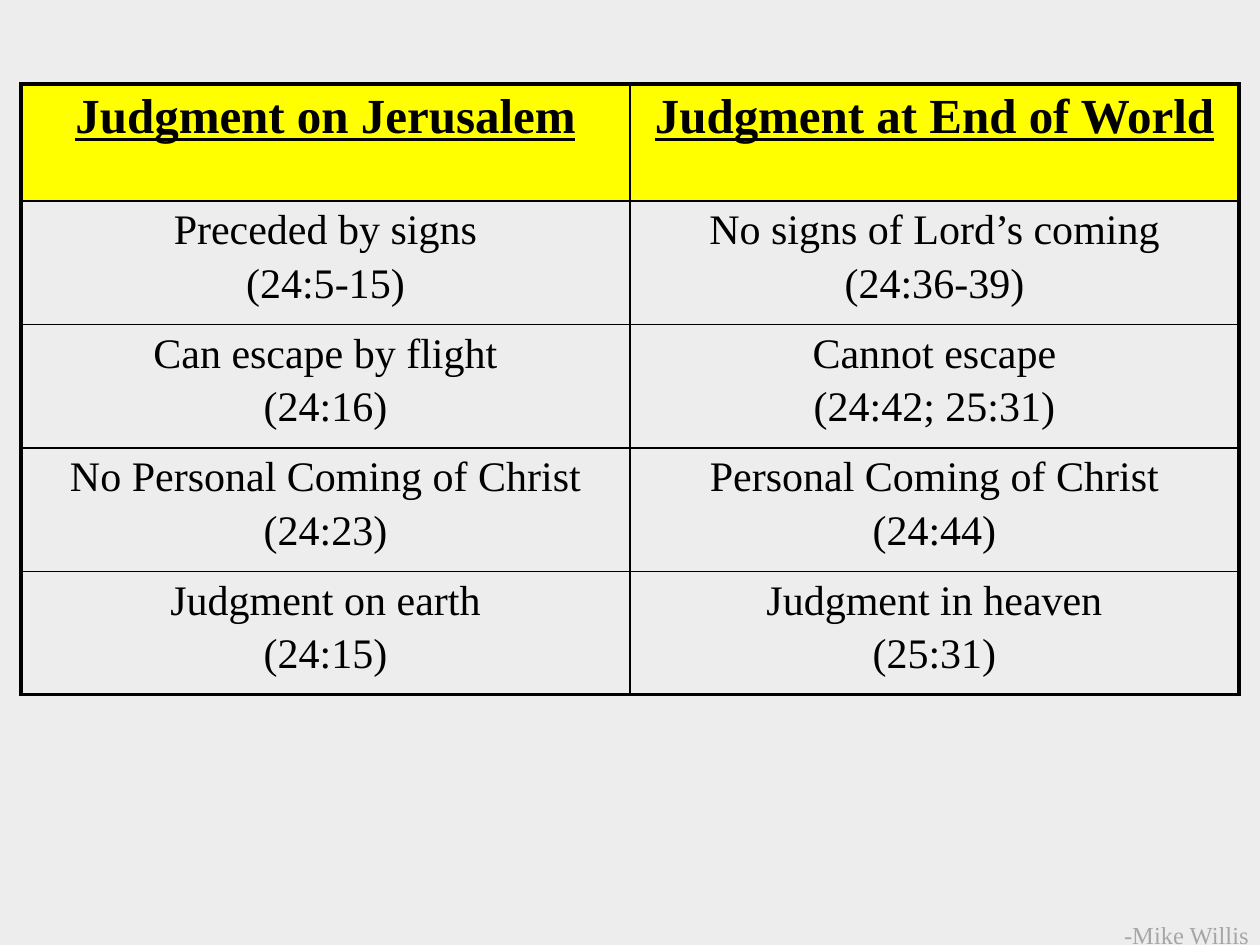
from dataclasses import dataclass

from lxml.etree import SubElement
from pptx import Presentation
from pptx.dml.color import RGBColor
from pptx.enum.text import PP_ALIGN
from pptx.oxml.ns import qn
from pptx.util import Pt


@dataclass(frozen=True)
class Theme:
    font: str = "Times New Roman"
    background: str = "EDEDED"
    ink: str = "000000"
    header_fill: str = "FFFF00"
    credit_ink: str = "A6A6A6"
    header_size: float = 28
    body_size: float = 24
    credit_size: float = 14
    frame_width: float = 2.25
    grid_width: float = 1


@dataclass(frozen=True)
class Box:
    left: float
    top: float
    width: float
    height: float

    def lengths(self):
        return [Pt(value) for value in (self.left, self.top, self.width, self.height)]


THEME = Theme()
HEADER_SHARE = 0.192

HEADERS = ["Judgment on Jerusalem", "Judgment at End of World"]
COMPARISONS = [
    [["Preceded by signs", "(24:5-15)"], ["No signs of Lord’s coming", "(24:36-39)"]],
    [["Can escape by flight", "(24:16)"], ["Cannot escape", "(24:42; 25:31)"]],
    [["No Personal Coming of Christ", "(24:23)"], ["Personal Coming of Christ", "(24:44)"]],
    [["Judgment on earth", "(24:15)"], ["Judgment in heaven", "(25:31)"]],
]


def write_lines(frame, lines, size, color, emphasis=False):
    for index, line in enumerate(lines):
        para = frame.add_paragraph() if index else frame.paragraphs[0]
        para.alignment = PP_ALIGN.CENTER
        if index:
            para.space_before = Pt(4)
        span = para.add_run()
        span.text = line
        span.font.name = THEME.font
        span.font.size = Pt(size)
        span.font.bold = emphasis
        span.font.underline = emphasis
        span.font.color.rgb = RGBColor.from_string(color)


def set_borders(cell, outer_sides):
    """Draw all four borders, thicker on the sides that face outwards."""
    properties = cell._tc.get_or_add_tcPr()
    for side in "LRTB":
        width = THEME.frame_width if side in outer_sides else THEME.grid_width
        line = SubElement(properties, qn(f"a:ln{side}"), w=str(Pt(width)))
        fill = SubElement(line, qn("a:solidFill"))
        SubElement(fill, qn("a:srgbClr"), val=THEME.ink)


def add_comparison(page, box):
    rows = [[[header] for header in HEADERS]] + COMPARISONS
    row_count, column_count = len(rows), len(HEADERS)
    table = page.shapes.add_table(row_count, column_count, *box.lengths()).table
    table.first_row = False
    table.horz_banding = False

    header_height = box.height * HEADER_SHARE
    body_height = (box.height - header_height) / len(COMPARISONS)
    for column in table.columns:
        column.width = Pt(box.width / column_count)

    for row_index, row in enumerate(rows):
        is_header = row_index == 0
        table.rows[row_index].height = Pt(header_height if is_header else body_height)
        for column_index, lines in enumerate(row):
            cell = table.cell(row_index, column_index)
            outer_sides = {
                "L": column_index == 0,
                "R": column_index == column_count - 1,
                "T": is_header,
                "B": row_index == row_count - 1,
            }
            set_borders(cell, [side for side, outer in outer_sides.items() if outer])
            if is_header:
                cell.fill.solid()
                cell.fill.fore_color.rgb = RGBColor.from_string(THEME.header_fill)
            else:
                cell.fill.background()
            size = THEME.header_size if is_header else THEME.body_size
            write_lines(cell.text_frame, lines, size, THEME.ink, is_header)


def add_credit(page, box):
    frame = page.shapes.add_textbox(*box.lengths()).text_frame
    frame.word_wrap = True
    write_lines(frame, ["-Mike Willis"], THEME.credit_size, THEME.credit_ink)


def main():
    deck = Presentation()
    deck.slide_width, deck.slide_height = Pt(720), Pt(540)
    page = deck.slides.add_slide(deck.slide_layouts[6])
    page.background.fill.solid()
    page.background.fill.fore_color.rgb = RGBColor.from_string(THEME.background)
    add_comparison(page, Box(12, 48, 696, 349))
    add_credit(page, Box(570, 522, 216, 24))
    deck.save("out.pptx")


if __name__ == "__main__":
    main()
